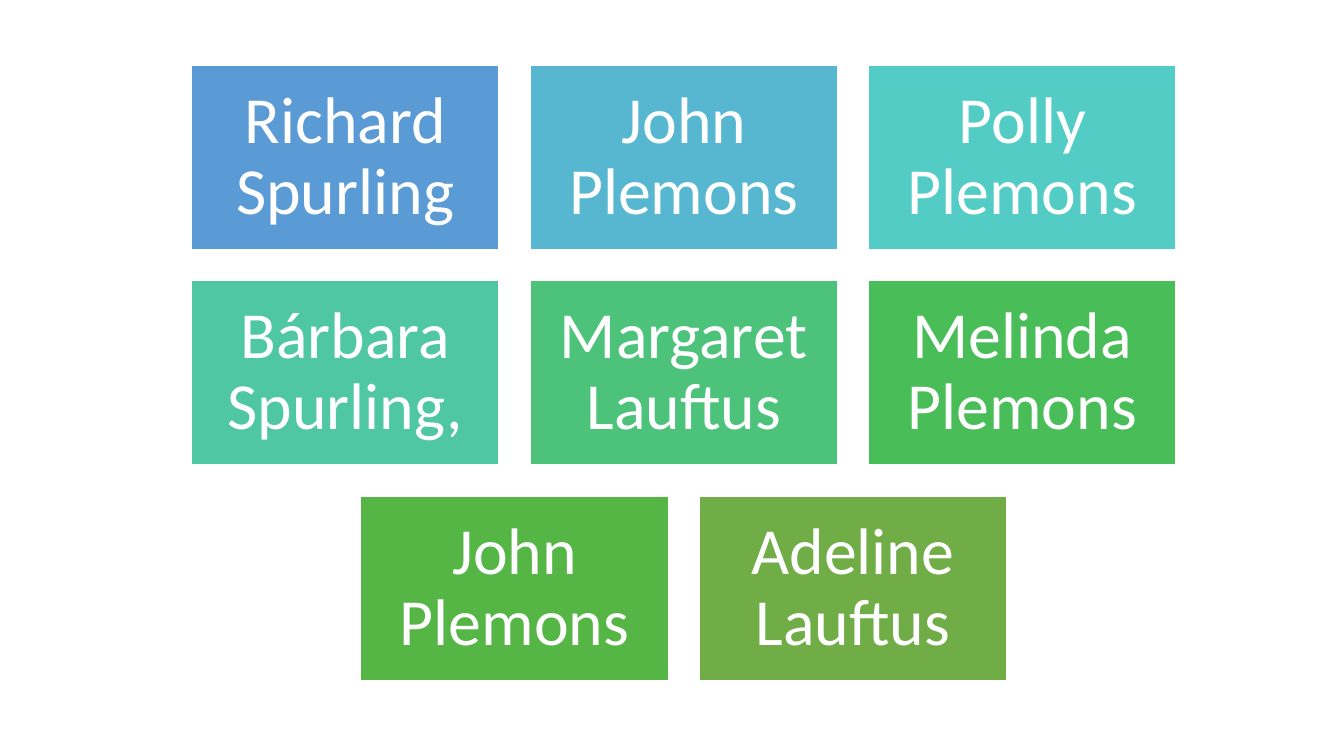
from dataclasses import dataclass

from pptx import Presentation
from pptx.dml.color import RGBColor
from pptx.enum import shapes, text
from pptx.util import Pt


@dataclass(frozen=True)
class Theme:
    font: str = "Calibri"
    name_size: float = 47
    white: str = "FFFFFF"
    tiles: tuple = ("5B9BD5", "57B7D1", "53CCC5", "4FC7A0",
                    "4CC27B", "48BD58", "55B646", "70AD47")


THEME = Theme()
PEOPLE = ["Richard Spurling", "John Plemons", "Polly Plemons",
          "Bárbara Spurling,", "Margaret Lauftus", "Melinda Plemons",
          "John Plemons", "Adeline Lauftus"]
COLUMNS = 3


def set_all(target, values):
    for key, value in values.items():
        setattr(target, key, value)


def add_name_tile(slide, box, person, color):
    tile = slide.shapes.add_shape(shapes.MSO_SHAPE.RECTANGLE, *map(Pt, box))
    tile.shadow.inherit = False
    tile.fill.solid()
    tile.fill.fore_color.rgb = RGBColor.from_string(color)
    tile.line.color.rgb = RGBColor.from_string(THEME.white)
    tile.line.width = Pt(1)

    frame = tile.text_frame
    inset = Pt(14.4)
    set_all(frame, dict(word_wrap=True, vertical_anchor=text.MSO_ANCHOR.MIDDLE,
                        margin_left=inset, margin_right=inset,
                        margin_top=inset, margin_bottom=inset))
    label = frame.paragraphs[0]
    label.text = person
    set_all(label, dict(alignment=text.PP_ALIGN.CENTER, line_spacing=0.9))
    set_all(label.font, dict(name=THEME.font, size=Pt(THEME.name_size)))
    label.font.color.rgb = RGBColor.from_string(THEME.white)


def add_people_grid(slide, box, gap):
    """Fill the box row by row, centring a last row that is not full."""
    left, top, width, height = box
    rows = -(-len(PEOPLE) // COLUMNS)
    tile_width = (width - gap * (COLUMNS - 1)) / COLUMNS
    tile_height = (height - gap * (rows - 1)) / rows
    for index, (person, color) in enumerate(zip(PEOPLE, THEME.tiles)):
        row, column = divmod(index, COLUMNS)
        in_row = min(COLUMNS, len(PEOPLE) - row * COLUMNS)
        indent = (COLUMNS - in_row) * (tile_width + gap) / 2
        tile_box = (left + indent + column * (tile_width + gap),
                    top + row * (tile_height + gap), tile_width, tile_height)
        add_name_tile(slide, tile_box, person, color)


def main():
    deck = Presentation()
    deck.slide_width, deck.slide_height = Pt(960), Pt(540)
    slide = deck.slides.add_slide(deck.slide_layouts[6])
    add_people_grid(slide, (136.8, 46.8, 703.4, 439.2), gap=22)
    deck.save("out.pptx")


if __name__ == "__main__":
    main()
